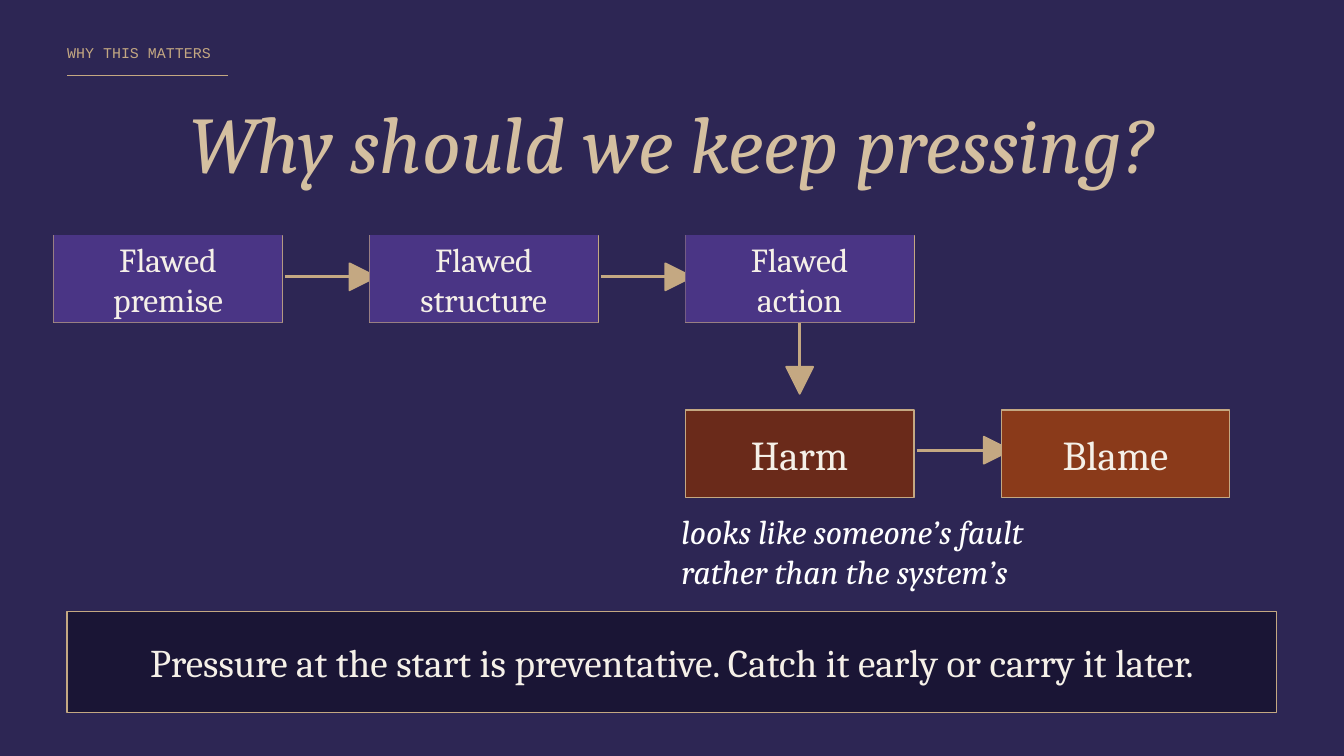
from pptx import Presentation
from pptx import util as u
from pptx.dml.color import RGBColor
from pptx.enum import shapes, text
from pptx.oxml import ns
from lxml import etree

PX = 4572
COLORS = {
    "background": "2D2654",
    "gold": "C4A882",
    "title": "D4BFA0",
    "flaw": "4A3585",
    "harm": "6A2A1A",
    "blame": "8A3A1A",
    "banner": "1A1535",
    "cream": "F5F0E8",
    "white": "FFFFFF",
}
SERIF = "Cambria"
MONO = "Courier New"
BOX_WIDTH, BOX_HEIGHT = 340, 130
COLUMNS = [80 + 470 * column for column in range(4)]
FLAW_TOP, RESULT_TOP = 350, 610
HEAD = 40


def px(*values):
    return [u.Emu(value * PX) for value in values]


def rgb(name):
    return RGBColor.from_string(COLORS[name])


def write(shape, lines, size, color, font=SERIF, italic=False,
          align=text.PP_ALIGN.CENTER, anchor=text.MSO_ANCHOR.MIDDLE):
    frame = shape.text_frame
    frame.word_wrap = True
    frame.auto_size = text.MSO_AUTO_SIZE.NONE
    frame.vertical_anchor = anchor
    frame.margin_left = frame.margin_right = 0
    frame.margin_top = frame.margin_bottom = 0
    for index, line in enumerate(lines):
        paragraph = frame.add_paragraph() if index else frame.paragraphs[0]
        paragraph.alignment = align
        run = paragraph.add_run()
        run.text = line
        run.font.name = font
        run.font.size = u.Pt(size)
        run.font.italic = italic
        run.font.color.rgb = rgb(color)


def add_title(slide, line):
    title = slide.shapes.title
    title.left, title.top, title.width, title.height = px(100, 124, 1800, 174)
    write(title, [line], 43, "title", italic=True)


def add_label(slide, bounds, lines, size, color, **style):
    label = slide.shapes.add_textbox(*px(*bounds))
    write(label, lines, size, color, align=text.PP_ALIGN.LEFT, **style)


def add_shape(slide, kind, bounds, fill, line_width):
    shape = slide.shapes.add_shape(kind, *px(*bounds))
    shape.shadow.inherit = False
    shape.fill.solid()
    shape.fill.fore_color.rgb = rgb(fill)
    if line_width:
        shape.line.color.rgb = rgb("gold")
        shape.line.width = u.Pt(line_width)
    else:
        shape.line.fill.background()
    return shape


def add_box(slide, bounds, fill, lines, size, line_width=0.75):
    box = add_shape(
        slide, shapes.MSO_SHAPE.RECTANGLE, bounds, fill, line_width)
    write(box, lines, size, "cream")


def add_line(slide, start, end, width):
    line = slide.shapes.add_connector(
        shapes.MSO_CONNECTOR.STRAIGHT, *px(*start, *end))
    line.line.color.rgb = rgb("gold")
    line.line.width = u.Pt(width)
    etree.SubElement(line._element.spPr, ns.qn("a:effectLst"))


def add_arrow(slide, start, end):
    add_line(slide, start, end, 1.5)
    x, y = end
    downward = start[0] == x
    center_x, center_y = (x, y - 4) if downward else (x - 4, y)
    bounds = (center_x - HEAD // 2, center_y - HEAD // 2, HEAD, HEAD)
    head = add_shape(
        slide, shapes.MSO_SHAPE.ISOSCELES_TRIANGLE, bounds, "gold", 1)
    head.rotation = 180 if downward else 90


def add_flaws(slide):
    for left, word in zip(COLUMNS, ["premise", "structure", "action"]):
        bounds = (left, FLAW_TOP, BOX_WIDTH, BOX_HEIGHT)
        add_shape(
            slide, shapes.MSO_SHAPE.RECTANGLE, bounds, "background", 0.75)
        add_box(slide, bounds, "flaw", ["Flawed", word], 18, line_width=0)
        if left != COLUMNS[2]:
            start = left + BOX_WIDTH + 4
            add_arrow(slide, (start, 412), (start + 120, 412))


def add_results(slide):
    middle = COLUMNS[2] + BOX_WIDTH // 2
    add_arrow(slide, (middle, FLAW_TOP + BOX_HEIGHT), (middle, 570))
    start = COLUMNS[2] + BOX_WIDTH + 4
    add_arrow(slide, (start, 670), (start + 124, 670))
    for left, word in zip(COLUMNS[2:], ["Harm", "Blame"]):
        add_box(slide, (left, RESULT_TOP, BOX_WIDTH, BOX_HEIGHT),
                word.lower(), [word], 22)


def main():
    presentation = Presentation()
    presentation.slide_width, presentation.slide_height = px(2000, 1125)
    slide = presentation.slides.add_slide(presentation.slide_layouts[5])
    slide.background.fill.solid()
    slide.background.fill.fore_color.rgb = rgb("background")

    add_label(slide, (100, 56, 1800, 44), ["WHY THIS MATTERS"], 8, "gold",
              font=MONO)
    add_line(slide, (100, 112), (340, 112), 0.75)
    add_title(slide, "Why should we keep pressing?")
    add_flaws(slide)
    add_results(slide)
    add_label(slide, (1014, 760, 816, 130),
              ["looks like someone’s fault", "rather than the system’s"],
              18, "white", italic=True, anchor=text.MSO_ANCHOR.TOP)
    add_box(slide, (100, 910, 1800, 150), "banner",
            ["Pressure at the start is preventative. "
             "Catch it early or carry it later."], 21)
    presentation.save("out.pptx")


if __name__ == "__main__":
    main()
